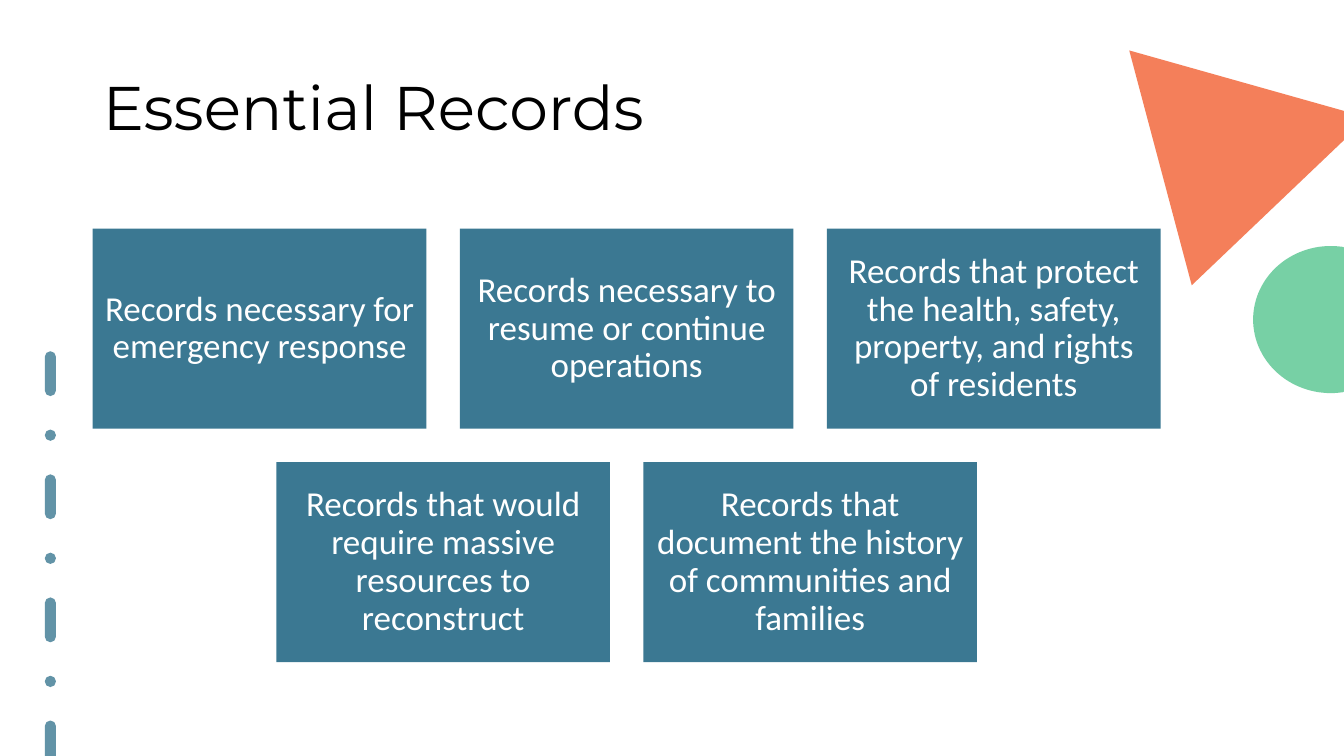
import math

import lxml.etree
import pptx
import pptx.dml.color
import pptx.enum.dml
import pptx.enum.shapes
import pptx.enum.text
import pptx.oxml.ns
import pptx.util

TEAL = pptx.dml.color.RGBColor(0x3B, 0x78, 0x92)
ORANGE = pptx.dml.color.RGBColor(0xF2, 0x60, 0x31)
GREEN = pptx.dml.color.RGBColor(0x55, 0xC5, 0x8F)
WHITE = pptx.dml.color.RGBColor(0xFF, 0xFF, 0xFF)
BLACK = pptx.dml.color.RGBColor(0, 0, 0)

ANCHOR = pptx.enum.text.MSO_ANCHOR
ALIGN = pptx.enum.text.PP_ALIGN

RECORD_ROWS = [
    [
        "Records necessary for emergency response",
        "Records necessary to resume or continue operations",
        "Records that protect the health, safety, property, and rights of residents",
    ],
    [
        "Records that would require massive resources to reconstruct",
        "Records that document the history of communities and families",
    ],
]


def set_values(target, values):
    for name, value in values.items():
        setattr(target, name, value)


class RecordsSlide:
    """Draws on one slide; all lengths are percent of its width or height."""

    title_font = {"name": "Montserrat", "size": pptx.util.Pt(44), "bold": False}
    card_font = {"name": "Calibri", "size": pptx.util.Pt(25)}
    opacity = 80
    grid_left, grid_top = 6.9, 30.24
    column_pitch, row_pitch = 27.31, 30.88
    card_width, card_height = 24.83, 26.48

    def __init__(self, deck):
        self.width, self.height = deck.slide_width, deck.slide_height
        self.slide = deck.slides.add_slide(deck.slide_layouts[5])
        self.shapes = self.slide.shapes

    def across(self, percent):
        return round(self.width * percent / 100)

    def down(self, percent):
        return round(self.height * percent / 100)

    def area(self, left, top, width, height):
        return self.across(left), self.down(top), self.across(width), self.down(height)

    def fill_text(self, shape, text, font, color, align, anchor, inset):
        frame = shape.text_frame
        margins = {f"margin_{side}": pptx.util.Inches(inset[side]) for side in inset}
        set_values(frame, margins | {
            "word_wrap": True,
            "auto_size": pptx.enum.text.MSO_AUTO_SIZE.NONE,
            "vertical_anchor": anchor,
        })
        para = frame.paragraphs[0]
        set_values(para, {"alignment": align, "line_spacing": 0.9})
        span = para.add_run()
        span.text = text
        set_values(span.font, font)
        span.font.color.rgb = color

    def title(self, text):
        box = self.shapes.title
        place = self.area(6.9, 9.6, 86.25, 12)
        set_values(box, dict(zip(("left", "top", "width", "height"), place)))
        inset = {"left": 0.1, "right": 0.1, "top": 0.05, "bottom": 0.05}
        self.fill_text(box, text, self.title_font, BLACK, ALIGN.LEFT, ANCHOR.TOP, inset)

    def card(self, column, row, text):
        box = self.shapes.add_shape(
            pptx.enum.shapes.MSO_SHAPE.RECTANGLE,
            *self.area(
                self.grid_left + column * self.column_pitch,
                self.grid_top + row * self.row_pitch,
                self.card_width,
                self.card_height,
            ),
        )
        self.paint(box, TEAL)
        inset = dict.fromkeys(("left", "right", "top", "bottom"), 0.1)
        self.fill_text(box, text, self.card_font, WHITE, ALIGN.CENTER, ANCHOR.MIDDLE, inset)

    def paint(self, shape, color):
        shape.shadow.inherit = False
        shape.fill.solid()
        shape.fill.fore_color.rgb = color
        shape.line.fill.background()

    def soften(self, shape):
        """Make the shape's colour partly transparent."""
        qn = pptx.oxml.ns.qn
        color = next(shape._element.spPr.iter(qn("a:srgbClr")))
        lxml.etree.SubElement(color, qn("a:alpha"), val=str(self.opacity * 1000))

    def outline(self, points, color):
        corners = [(self.across(x), self.down(y)) for x, y in points]
        builder = self.shapes.build_freeform(*corners[0])
        builder.add_line_segments(corners[1:], close=True)
        shape = builder.convert_to_shape()
        self.paint(shape, color)
        self.soften(shape)

    def cut_circle(self, center_x, center_y, radius_x, radius_y, color):
        """Draw an ellipse cut off at the slide's right edge."""
        angles = [math.radians(degree) for degree in range(0, 360, 3)]
        self.outline(
            [
                (min(100, center_x + radius_x * math.cos(angle)),
                 center_y + radius_y * math.sin(angle))
                for angle in angles
            ],
            color,
        )

    def dashed_line(self, x, top, bottom, color):
        line = self.shapes.add_connector(
            pptx.enum.shapes.MSO_CONNECTOR.STRAIGHT,
            self.across(x), self.down(top), self.across(x), self.down(bottom),
        )
        line.line.color.rgb = color
        set_values(line.line, {
            "width": pptx.util.Pt(8),
            "dash_style": pptx.enum.dml.MSO_LINE.DASH_DOT,
        })
        qn = pptx.oxml.ns.qn
        properties = line._element.spPr
        properties.find(qn("a:ln")).set("cap", "rnd")
        lxml.etree.SubElement(properties, qn("a:effectLst"))
        self.soften(line)


def main():
    deck = pptx.Presentation()
    set_values(deck, {
        "slide_width": pptx.util.Inches(13.33),
        "slide_height": pptx.util.Inches(7.5),
    })
    page = RecordsSlide(deck)
    triangle = [(84.02, 6.67), (100, 14.67), (100, 18.53), (88.67, 37.73)]
    page.outline(triangle, ORANGE)
    page.dashed_line(3.75, 47.2, 100, TEAL)
    page.cut_circle(99.02, 42.27, 5.78, 9.73, GREEN)
    most = max(len(texts) for texts in RECORD_ROWS)
    for row, texts in enumerate(RECORD_ROWS):
        indent = (most - len(texts)) / 2
        for column, text in enumerate(texts):
            page.card(column + indent, row, text)
    page.title("Essential Records")
    deck.save("out.pptx")


if __name__ == "__main__":
    main()
